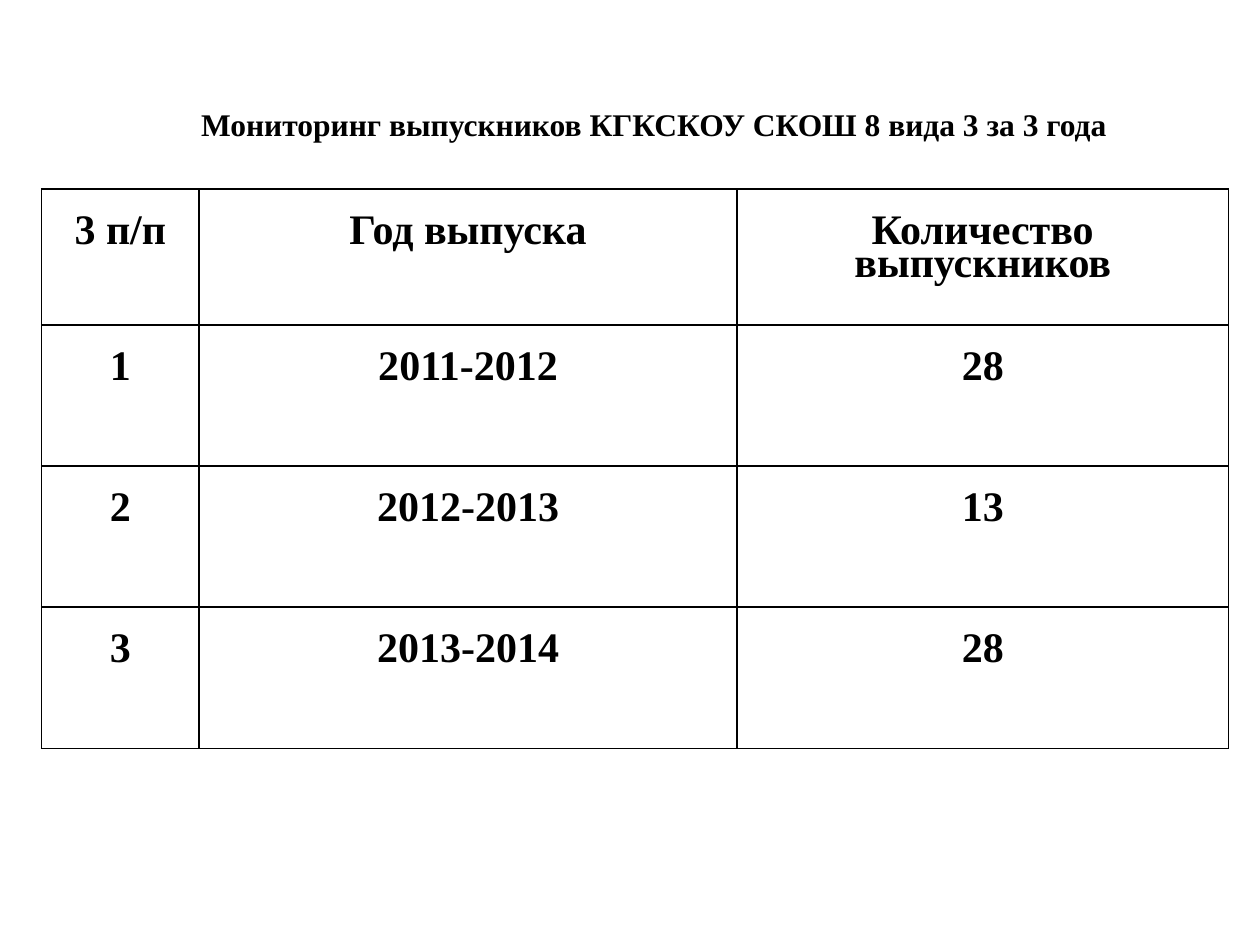
from dataclasses import dataclass

from lxml import etree
from pptx import Presentation
from pptx.dml.color import RGBColor
from pptx.enum import text
from pptx.oxml import ns
from pptx.util import Inches, Pt

COLORS = {"ink": "000000", "paper": "FFFFFF"}
FONT = "Times New Roman"


@dataclass
class Column:
    heading: str
    width: float
    values: list[str]


COLUMNS = [
    Column("3 п/п", 1.25, ["1", "2", "3"]),
    Column("Год выпуска", 4.27, ["2011-2012", "2012-2013", "2013-2014"]),
    Column("Количество выпускников", 3.9, ["28", "13", "28"]),
]
ROW_HEIGHTS = [1.08, 1.12, 1.12, 1.12]


def style_paragraph(p, size: float) -> None:
    p.alignment = text.PP_ALIGN.CENTER
    p.font.name = FONT
    p.font.size = Pt(size)
    p.font.bold = True
    p.font.color.rgb = RGBColor.from_string(COLORS["ink"])


def add_borders(cell, width: float = 1) -> None:
    props = cell._tc.get_or_add_tcPr()
    for i, side in enumerate(("lnL", "lnR", "lnT", "lnB")):
        line = etree.Element(ns.qn(f"a:{side}"), w=str(Pt(width)))
        fill = etree.SubElement(line, ns.qn("a:solidFill"))
        etree.SubElement(fill, ns.qn("a:srgbClr"), val=COLORS["ink"])
        props.insert(i, line)


def fill_cell(cell, value: str) -> None:
    cell.fill.solid()
    cell.fill.fore_color.rgb = RGBColor.from_string(COLORS["paper"])
    cell.margin_left = cell.margin_right = Inches(0.07)
    cell.margin_top = Pt(18.5)  # one line of space above the text
    cell.margin_bottom = 0
    cell.text = value
    p = cell.text_frame.paragraphs[0]
    p.line_spacing = Pt(18.5)
    style_paragraph(p, 24)
    add_borders(cell)


def add_graduate_table(s, columns: list[Column]) -> None:
    table = s.shapes.add_table(
        len(ROW_HEIGHTS), len(columns), Inches(0.33), Inches(1.5),
        Inches(sum(c.width for c in columns)), Inches(sum(ROW_HEIGHTS))).table
    for row, height in zip(table.rows, ROW_HEIGHTS):
        row.height = Inches(height)
    for c, column in enumerate(columns):
        table.columns[c].width = Inches(column.width)
        for r, value in enumerate([column.heading, *column.values]):
            fill_cell(table.cell(r, c), value)


def add_title(s, title: str) -> None:
    tf = s.shapes.add_textbox(Inches(1.17), Inches(0.77), Inches(8), Inches(0.71)).text_frame
    tf.word_wrap = True
    tf.vertical_anchor = text.MSO_ANCHOR.TOP
    tf.margin_left = Inches(0.14)
    tf.margin_top = Inches(0.06)
    p = tf.paragraphs[0]
    p.text = title
    style_paragraph(p, 18)


def main() -> None:
    prs = Presentation()
    prs.slide_width, prs.slide_height = Inches(10), Inches(7.5)
    s = prs.slides.add_slide(prs.slide_layouts[6])
    add_graduate_table(s, COLUMNS)
    add_title(s, "Мониторинг выпускников КГКСКОУ СКОШ 8 вида 3 за 3 года")
    prs.save("out.pptx")


if __name__ == "__main__":
    main()
